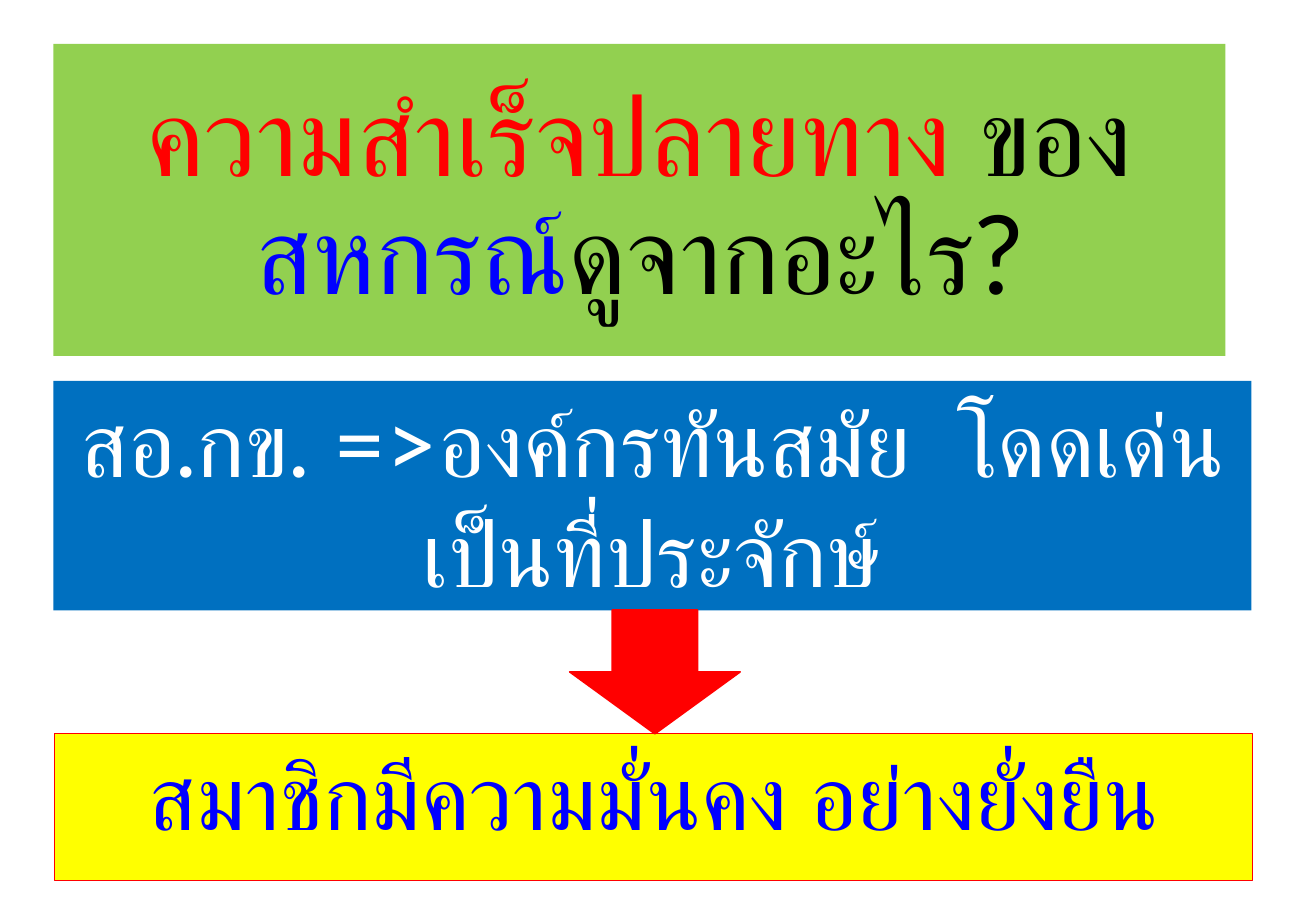
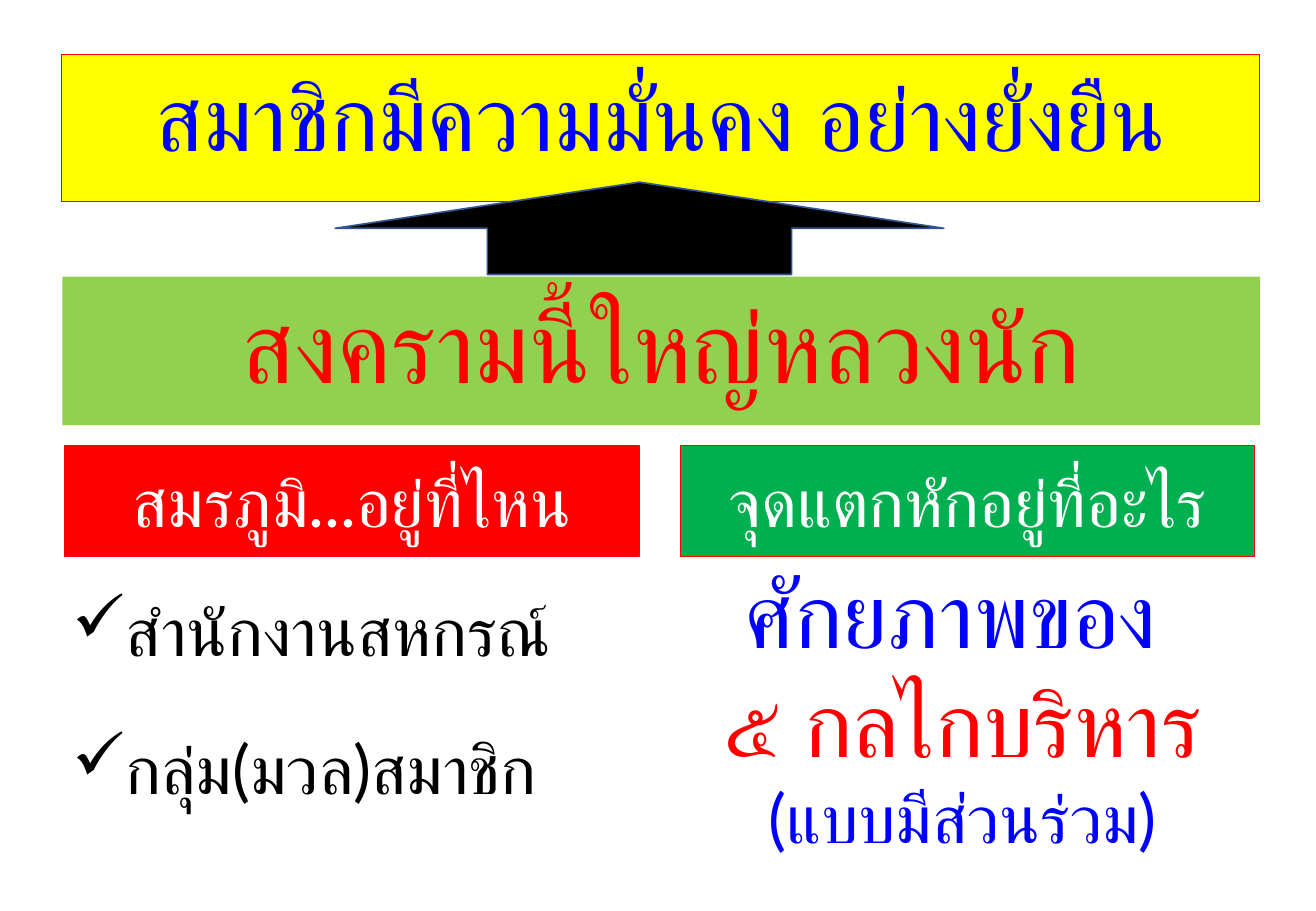
from dataclasses import dataclass

from lxml.etree import SubElement
from pptx import Presentation
from pptx.dml.color import RGBColor
from pptx.enum.shapes import MSO_SHAPE
from pptx.enum.text import MSO_ANCHOR, MSO_AUTO_SIZE, PP_ALIGN
from pptx.oxml.ns import qn
from pptx.util import Pt

FONT = "Lato"
COLORS = {
    "black": "000000",
    "white": "FFFFFF",
    "red": "FF0000",
    "blue": "0000FF",
    "yellow": "FFFF00",
    "lime": "92D050",
    "green": "00B050",
    "azure": "0070C0",
    "navy": "325491",
}
TITLE_ONLY = 5
BAND_WIDTH = 710
INDENT = 18


@dataclass(frozen=True)
class Box:
    left: float
    top: float
    width: float
    height: float

    def lengths(self) -> tuple:
        return Pt(self.left), Pt(self.top), Pt(self.width), Pt(self.height)


@dataclass(frozen=True)
class Run:
    text: str
    color: str
    size: float


@dataclass(frozen=True)
class Panel:
    box: Box
    run: Run
    fill: str
    line: str | None = "red"
    anchor: MSO_ANCHOR = MSO_ANCHOR.MIDDLE


def rgb(name: str) -> RGBColor:
    return RGBColor.from_string(COLORS[name])


def add_run(paragraph, run: Run) -> None:
    text_run = paragraph.add_run()
    text_run.text = run.text
    text_run.font.name = FONT
    text_run.font.size = Pt(run.size)
    text_run.font.color.rgb = rgb(run.color)
    # Thai letters take the complex-script font
    SubElement(text_run.font._element, qn("a:cs"), typeface=FONT)


def add_bullet(paragraph, character: str) -> None:
    properties = paragraph._p.get_or_add_pPr()
    properties.set("marL", str(Pt(INDENT)))
    properties.set("indent", str(-Pt(INDENT)))
    SubElement(properties, qn("a:buChar"), char=character)


def write_text(shape, lines: list[list[Run]], *, anchor=MSO_ANCHOR.MIDDLE,
               align=PP_ALIGN.CENTER, before: float = 0,
               spacing: float = 1.0, bullet: str | None = None) -> None:
    """Write one paragraph for each list of runs."""
    frame = shape.text_frame
    frame.word_wrap = True
    frame.auto_size = MSO_AUTO_SIZE.NONE
    frame.vertical_anchor = anchor
    for index, runs in enumerate(lines):
        paragraph = frame.add_paragraph() if index else frame.paragraphs[0]
        paragraph.alignment = align
        paragraph.space_before = Pt(before)
        paragraph.line_spacing = spacing
        if bullet:
            add_bullet(paragraph, bullet)
        for run in runs:
            add_run(paragraph, run)


def add_filled_shape(slide, kind: MSO_SHAPE, box: Box, fill: str,
                     line: str | None, line_width: float = 1):
    shape = slide.shapes.add_shape(kind, *box.lengths())
    shape.shadow.inherit = False
    shape.fill.solid()
    shape.fill.fore_color.rgb = rgb(fill)
    if line:
        shape.line.color.rgb = rgb(line)
        shape.line.width = Pt(line_width)
    else:
        shape.line.fill.background()
    return shape


def add_panel(slide, panel: Panel) -> None:
    shape = add_filled_shape(slide, MSO_SHAPE.RECTANGLE, panel.box, panel.fill, panel.line, 0.75)
    write_text(shape, [[panel.run]], anchor=panel.anchor, before=10)


def add_text_box(slide, box: Box, lines: list[list[Run]], **text_format) -> None:
    write_text(slide.shapes.add_textbox(*box.lengths()), lines, **text_format)


def add_titled_slide(presentation, box: Box, runs: list[Run]):
    slide = presentation.slides.add_slide(presentation.slide_layouts[TITLE_ONLY])
    title = slide.shapes.title
    title.left, title.top, title.width, title.height = box.lengths()
    title.fill.solid()
    title.fill.fore_color.rgb = rgb("lime")
    write_text(title, [runs], spacing=0.9)
    return slide


def member_panel(left: float, top: float) -> Panel:
    return Panel(Box(left, top, BAND_WIDTH, 87),
                 Run("สมาชิกมีความมั่นคง อย่างยั่งยืน", "blue", 54),
                 "yellow", anchor=MSO_ANCHOR.TOP)


def build_success_slide(presentation) -> None:
    slide = add_titled_slide(presentation, Box(31.7, 26, 694.6, 185), [
        Run("ความสำเร็จปลายทาง ", "red", 64.8),
        Run("ของ", "black", 64.8),
        Run("สหกรณ์", "blue", 64.8),
        Run("ดูจากอะไร?", "black", 64.8),
    ])
    add_panel(slide, Panel(
        Box(31.7, 225.8, BAND_WIDTH, 136),
        Run("สอ.กข. =>องค์กรทันสมัย  โดดเด่น เป็นที่ประจักษ์", "white", 54),
        "azure", line=None, anchor=MSO_ANCHOR.TOP))
    add_panel(slide, member_panel(32.4, 434.8))
    add_filled_shape(slide, MSO_SHAPE.DOWN_ARROW, Box(337.7, 361.6, 101, 73.4), "red", "red")


def build_battle_slide(presentation) -> None:
    slide = add_titled_slide(presentation, Box(37, 164, BAND_WIDTH, 88),
                             [Run("สงครามนี้ใหญ่หลวงนัก", "red", 60)])
    add_panel(slide, member_panel(36.4, 32.4))
    add_filled_shape(slide, MSO_SHAPE.UP_ARROW, Box(198.7, 108, 360.7, 54.7), "black", "navy")

    headings = [("สมรภูมิ...อยู่ที่ไหน", "red"), ("จุดแตกหักอยู่ที่อะไร", "green")]
    for column, (text, fill) in enumerate(headings):
        add_panel(slide, Panel(Box(38.2 + 365 * column, 264.2, 340.6, 65.5),
                               Run(text, "white", 40), fill))

    for row, text in enumerate(["สำนักงานสหกรณ์", "กลุ่ม(มวล)สมาชิก"]):
        add_text_box(slide, Box(36, 345.6 + 82 * row, 350, 65.5),
                     [[Run(text, "black", 40)]], anchor=MSO_ANCHOR.TOP,
                     align=PP_ALIGN.LEFT, before=10, bullet="✓")

    add_text_box(slide, Box(386.6, 330.5, 368, 177), [
        [Run("ศักยภาพของ ", "blue", 54)],
        [Run("๕ กลไกบริหาร", "red", 54)],
        [Run("(แบบมีส่วนร่วม)", "blue", 40)],
    ])


def main() -> None:
    presentation = Presentation()
    presentation.slide_width = Pt(780)
    presentation.slide_height = Pt(540)
    build_success_slide(presentation)
    build_battle_slide(presentation)
    presentation.save("out.pptx")


if __name__ == "__main__":
    main()
